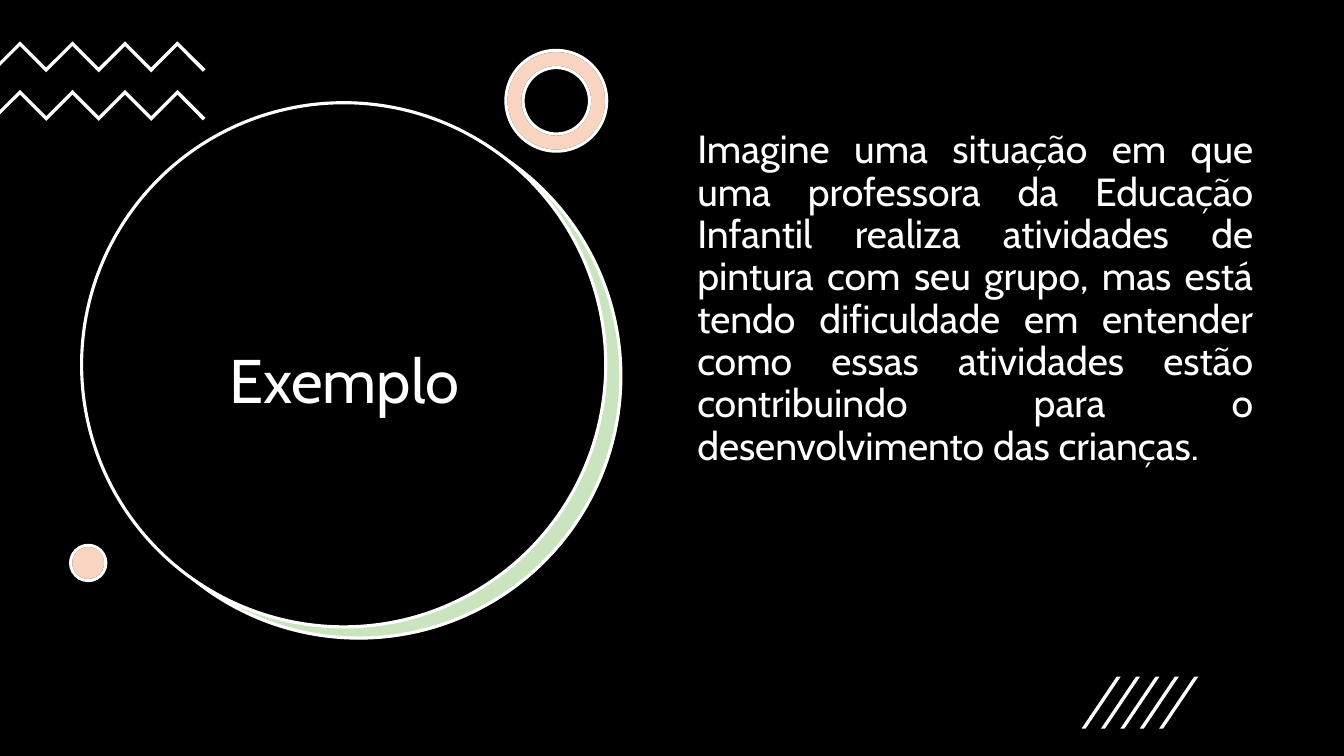
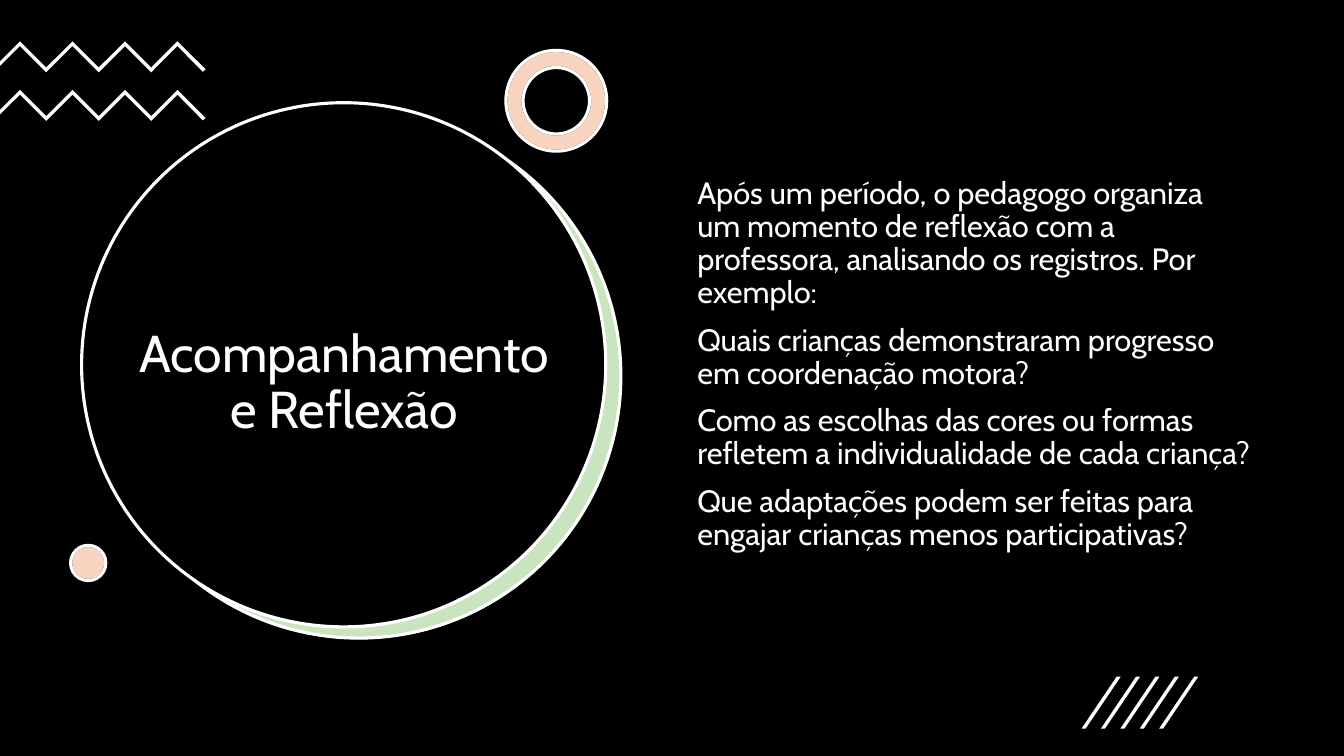
from dataclasses import dataclass
from typing import Any, NamedTuple

from lxml import etree
from pptx import Presentation
from pptx.dml.color import RGBColor
from pptx.enum.shapes import MSO_SHAPE
from pptx.enum.text import MSO_ANCHOR, PP_ALIGN
from pptx.oxml.ns import qn
from pptx.util import Pt

OVAL, DONUT = MSO_SHAPE.OVAL, MSO_SHAPE.DONUT
TOP, MIDDLE = MSO_ANCHOR.TOP, MSO_ANCHOR.MIDDLE
LEFT, CENTER, JUSTIFY = PP_ALIGN.LEFT, PP_ALIGN.CENTER, PP_ALIGN.JUSTIFY

Point = tuple[float, float]


@dataclass(frozen=True)
class Theme:
    black: RGBColor = RGBColor(0x00, 0x00, 0x00)
    white: RGBColor = RGBColor(0xFF, 0xFF, 0xFF)
    green: RGBColor = RGBColor(0x4E, 0xA7, 0x2E)
    orange: RGBColor = RGBColor(0xE9, 0x71, 0x32)
    tint: int = 30
    line: float = 2.25
    font: str = "Cabin"
    head: int = 44
    head_long: int = 37
    body: int = 28
    body_long: int = 22


THEME = Theme()


class Box(NamedTuple):
    left: float
    top: float
    width: float
    height: float


class Disc(NamedTuple):
    kind: MSO_SHAPE
    left: float
    top: float
    size: float
    fill: RGBColor
    line: RGBColor | None
    alpha: int = 100


class Page(NamedTuple):
    title: str
    title_size: int
    texts: list[str]
    size: int
    align: PP_ALIGN
    inset: float


def layers(kind: MSO_SHAPE, left: float, top: float, size: float) -> list[Disc]:
    """A white base with an orange tint on top."""
    return [
        Disc(kind, left, top, size, THEME.white, THEME.black),
        Disc(kind, left, top, size, THEME.orange, THEME.white, THEME.tint),
    ]


HEAD = Box(87.1, 147.6, 317.5, 253.4)
BODY = Box(491, 89.3, 411.1, 342.7)

MOON = [
    Disc(OVAL, 69.8, 82.1, 374.4, THEME.white, None),
    Disc(OVAL, 69.1, 81.4, 374.4, THEME.green, THEME.white, THEME.tint),
    Disc(OVAL, 58.3, 73.4, 374.4, THEME.black, THEME.white),
]
DOTS = layers(DONUT, 361.4, 36, 72) + layers(OVAL, 50.4, 389.5, 25.2)
RING = 0.17

PAGES = [
    Page("Exemplo", THEME.head, [
        "Imagine uma situação em que uma professora da Educação Infantil "
        "realiza atividades de pintura com seu grupo, mas está tendo "
        "dificuldade em entender como essas atividades estão contribuindo "
        "para o desenvolvimento das crianças.",
    ], THEME.body, JUSTIFY, 3.6),
    Page("Acompanhamento e Reflexão", THEME.head_long, [
        "Após um período, o pedagogo organiza um momento de reflexão com a "
        "professora, analisando os registros. Por exemplo:",
        "Quais crianças demonstraram progresso em coordenação motora?",
        "Como as escolhas das cores ou formas refletem a individualidade de "
        "cada criança?",
        "Que adaptações podem ser feitas para engajar crianças menos "
        "participativas?",
    ], THEME.body_long, LEFT, 37.6),
]


def assign(target: Any, values: dict[str, Any]) -> None:
    for name, value in values.items():
        setattr(target, name, value)


def paint(shape: Any, fill: RGBColor, line: RGBColor | None, alpha: int = 100) -> None:
    shape.shadow.inherit = False
    shape.fill.solid()
    shape.fill.fore_color.rgb = fill
    if alpha < 100:
        color = shape._element.spPr.find(qn("a:solidFill"))[0]
        etree.SubElement(color, qn("a:alpha"), val=str(alpha * 1000))
    if line is None:
        shape.line.fill.background()
    else:
        shape.line.color.rgb = line
        shape.line.width = Pt(THEME.line)


def add_disc(shapes: Any, disc: Disc) -> None:
    side = Pt(disc.size)
    shape = shapes.add_shape(disc.kind, Pt(disc.left), Pt(disc.top), side, side)
    if disc.kind == DONUT:
        shape.adjustments[0] = RING
    paint(shape, disc.fill, disc.line, disc.alpha)


def add_poly(shapes: Any, points: list[Point]) -> None:
    spots = [(Pt(x), Pt(y)) for x, y in points]
    path = shapes.build_freeform(*spots[0], scale=1.0)
    path.add_line_segments(spots[1:], close=True)
    paint(path.convert_to_shape(), THEME.white, None)


def add_waves(shapes: Any) -> None:
    """Two zigzag bands at the left edge."""
    group = shapes.add_group_shape().shapes
    step, thick = 18.75, 3.4
    for top in (29.5, 64.2):
        crest = [(14.3 + step * i, top + step * (i % 2)) for i in range(7)]
        trough = [(x, y + thick) for x, y in reversed(crest)]
        tail = [(146.9, top + 20), (144.9, top + 21.8)]
        edge = [(0, top + 17.5), (0, top + 14.3)]
        add_poly(group, crest + tail + trough + edge)


def add_slashes(shapes: Any) -> None:
    group = shapes.add_group_shape().shapes
    top, base, lean, thick = 483.4, 520.4, 25, 2.9
    for i in range(5):
        x = 772.6 + 13.85 * i
        add_poly(group, [(x + thick, base), (x, base),
                         (x + lean, top), (x + lean + thick, top)])


def add_text(shapes: Any, box: Box, texts: list[str], size: int,
             align: PP_ALIGN, frame: dict[str, Any], gap: float = 0) -> None:
    area = shapes.add_textbox(*map(Pt, box)).text_frame
    assign(area, {"word_wrap": True, **frame})
    for i, text in enumerate(texts):
        para = area.add_paragraph() if i else area.paragraphs[0]
        assign(para, {"alignment": align, "line_spacing": 0.9,
                      "space_before": Pt(gap if i else 0)})
        run = para.add_run()
        run.text = text
        assign(run.font, {"name": THEME.font, "size": Pt(size)})
        run.font.color.rgb = THEME.white


def add_page(deck: Any, page: Page) -> None:
    slide = deck.slides.add_slide(deck.slide_layouts[6])
    back = slide.background.fill
    back.solid()
    back.fore_color.rgb = THEME.black
    shapes = slide.shapes
    for disc in MOON:
        add_disc(shapes, disc)
    add_text(shapes, HEAD, [page.title], page.title_size, CENTER,
             {"vertical_anchor": MIDDLE})
    add_waves(shapes)
    for disc in DOTS:
        add_disc(shapes, disc)
    add_text(shapes, BODY, page.texts, page.size, page.align,
             {"vertical_anchor": TOP, "margin_top": Pt(page.inset)}, gap=10)
    add_slashes(shapes)


def main() -> None:
    deck = Presentation()
    assign(deck, {"slide_width": Pt(960), "slide_height": Pt(540)})
    for page in PAGES:
        add_page(deck, page)
    deck.save("out.pptx")


if __name__ == "__main__":
    main()
